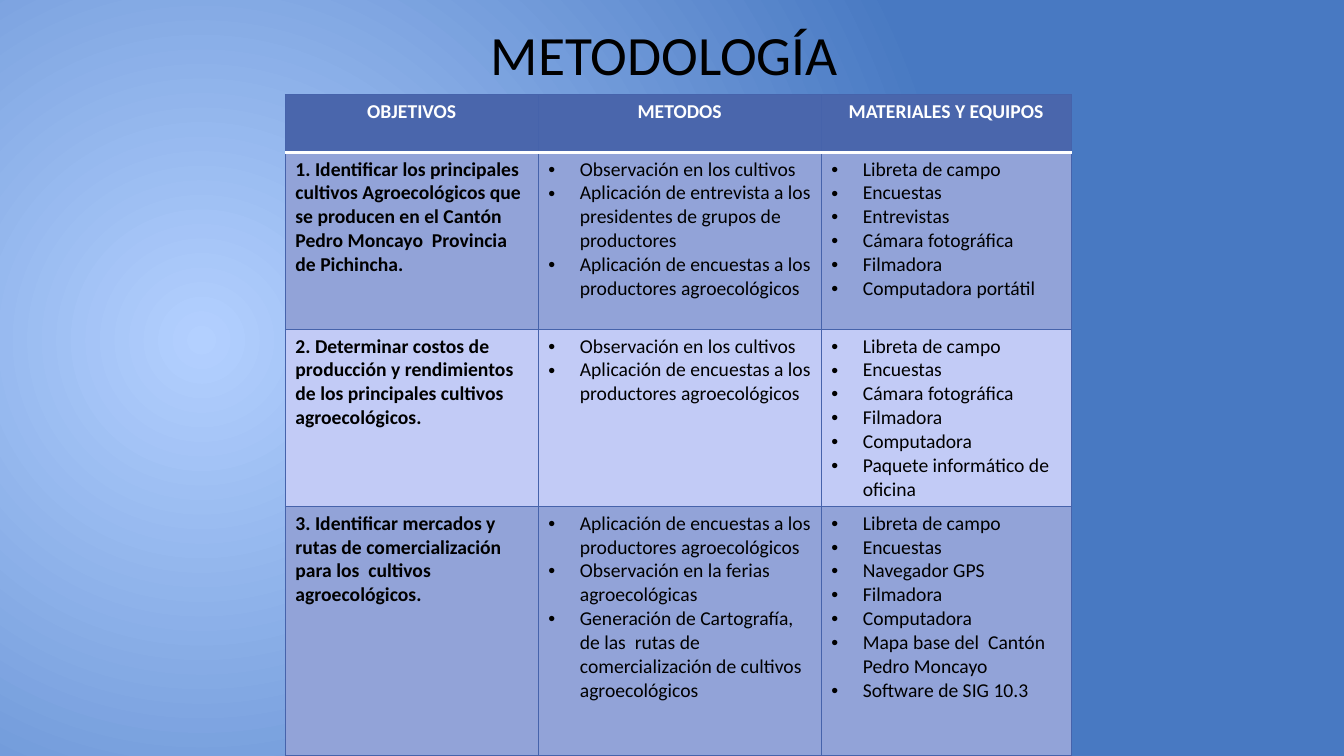
"""Build the methodology slide: a title above a table of objectives, methods and materials."""
from lxml.etree import SubElement
from pptx import Presentation
from pptx.dml.color import RGBColor
from pptx.enum.text import MSO_ANCHOR, MSO_AUTO_SIZE, PP_ALIGN
from pptx.oxml.ns import qn
from pptx.util import Pt

FONT = "Calibri"
COLORS = {
    "glow": "B3D0FF",
    "backdrop": "4879C2",
    "header": "4A66AC",
    "dark_band": "92A3D8",
    "light_band": "C2CBF6",
    "border": "4663AB",
    "white": "FFFFFF",
    "black": "000000",
}
COLUMN_WIDTHS = [180.7, 202.1, 178.6]
ROW_HEIGHTS = [41.4, 126.4, 126.4, 177.9]
HEADERS = ["OBJETIVOS", "METODOS", "MATERIALES Y EQUIPOS"]
OBSERVATION = "Observación en los cultivos"
SURVEYS = "Aplicación de encuestas a los productores agroecológicos"
ROWS = [
    (
        "1. Identificar los principales cultivos Agroecológicos que se producen "
        "en el Cantón Pedro Moncayo  Provincia de Pichincha.",
        [
            OBSERVATION,
            "Aplicación de entrevista a los presidentes de grupos de productores",
            SURVEYS,
        ],
        ["Libreta de campo", "Encuestas", "Entrevistas", "Cámara fotográfica",
         "Filmadora", "Computadora portátil"],
    ),
    (
        "2. Determinar costos de producción y rendimientos de los principales "
        "cultivos agroecológicos.",
        [OBSERVATION, SURVEYS],
        ["Libreta de campo", "Encuestas", "Cámara fotográfica", "Filmadora",
         "Computadora", "Paquete informático de oficina"],
    ),
    (
        "3. Identificar mercados y rutas de comercialización para los  cultivos "
        "agroecológicos.",
        [
            SURVEYS,
            "Observación en la ferias agroecológicas",
            "Generación de Cartografía, de las  rutas de comercialización de "
            "cultivos agroecológicos",
        ],
        ["Libreta de campo", "Encuestas", "Navegador GPS", "Filmadora",
         "Computadora", "Mapa base del  Cantón Pedro Moncayo",
         "Software de SIG 10.3"],
    ),
]


def color(name):
    return RGBColor.from_string(COLORS[name])


def set_background(slide):
    fill = slide.background.fill
    fill.gradient()
    for stop, name, position in zip(fill.gradient_stops, ("glow", "backdrop"), (0, 1)):
        stop.color.rgb = color(name)
        stop.position = position
    gradient = slide.element.find(".//" + qn("a:gradFill"))
    gradient.remove(gradient.find(qn("a:lin")))
    circle = SubElement(gradient, qn("a:path"), path="circle")
    SubElement(circle, qn("a:fillToRect"), l="15000", t="50000", r="85000", b="60000")


def add_run(paragraph, text, size, color_name, bold=False):
    run = paragraph.add_run()
    run.text = text
    run.font.name = FONT
    run.font.size = Pt(size)
    run.font.bold = bold
    run.font.color.rgb = color(color_name)


def set_title(slide, text):
    title = slide.shapes.title
    title.left, title.top, title.width, title.height = Pt(230.4), Pt(15.8), Pt(488.2), Pt(43.9)
    frame = title.text_frame
    frame.auto_size = MSO_AUTO_SIZE.NONE
    frame.vertical_anchor = MSO_ANCHOR.MIDDLE
    paragraph = frame.paragraphs[0]
    paragraph.alignment = PP_ALIGN.CENTER
    add_run(paragraph, text, 39.6, "black")


def add_bullet(paragraph):
    properties = paragraph._p.get_or_add_pPr()
    properties.set("marL", str(Pt(22.5)))
    properties.set("indent", str(-Pt(22.5)))
    SubElement(properties, qn("a:buFont"), typeface="Arial")
    SubElement(properties, qn("a:buChar"), char="•")


def set_borders(cell, row):
    properties = cell._tc.get_or_add_tcPr()
    white_edge = {0: "lnB", 1: "lnT"}.get(row)
    for edge in ("lnL", "lnR", "lnT", "lnB"):
        name, width = ("white", 2) if edge == white_edge else ("border", 0.75)
        line = SubElement(properties, qn("a:" + edge), w=str(Pt(width)))
        fill = SubElement(line, qn("a:solidFill"))
        SubElement(fill, qn("a:srgbClr"), val=COLORS[name])


def fill_cell(cell, row, fill_name, lines, text_color="black", bold=False,
              bulleted=False, alignment=PP_ALIGN.LEFT):
    set_borders(cell, row)
    cell.fill.solid()
    cell.fill.fore_color.rgb = color(fill_name)
    frame = cell.text_frame
    for index, line in enumerate(lines):
        paragraph = frame.add_paragraph() if index else frame.paragraphs[0]
        paragraph.alignment = alignment
        if bulleted:
            add_bullet(paragraph)
        add_run(paragraph, line, 14, text_color, bold)


def add_methodology_table(slide):
    frame = slide.shapes.add_table(
        len(ROW_HEIGHTS), len(COLUMN_WIDTHS), Pt(203.8), Pt(67.5),
        Pt(sum(COLUMN_WIDTHS)), Pt(sum(ROW_HEIGHTS)))
    table = frame.table
    for column, width in zip(table.columns, COLUMN_WIDTHS):
        column.width = Pt(width)
    for row, height in zip(table.rows, ROW_HEIGHTS):
        row.height = Pt(height)
    for column, header in enumerate(HEADERS):
        fill_cell(table.cell(0, column), 0, "header", [header], "white",
                  bold=True, alignment=PP_ALIGN.CENTER)
    for row, (objective, methods, materials) in enumerate(ROWS, start=1):
        band = "dark_band" if row % 2 else "light_band"
        fill_cell(table.cell(row, 0), row, band, [objective], bold=True)
        for column, items in enumerate((methods, materials), start=1):
            fill_cell(table.cell(row, column), row, band, items, bulleted=True)


def main():
    presentation = Presentation()
    presentation.slide_width, presentation.slide_height = Pt(960), Pt(540)
    slide = presentation.slides.add_slide(presentation.slide_layouts.get_by_name("Title Only"))
    set_background(slide)
    set_title(slide, "METODOLOGÍA")
    add_methodology_table(slide)
    presentation.save("out.pptx")


if __name__ == "__main__":
    main()
